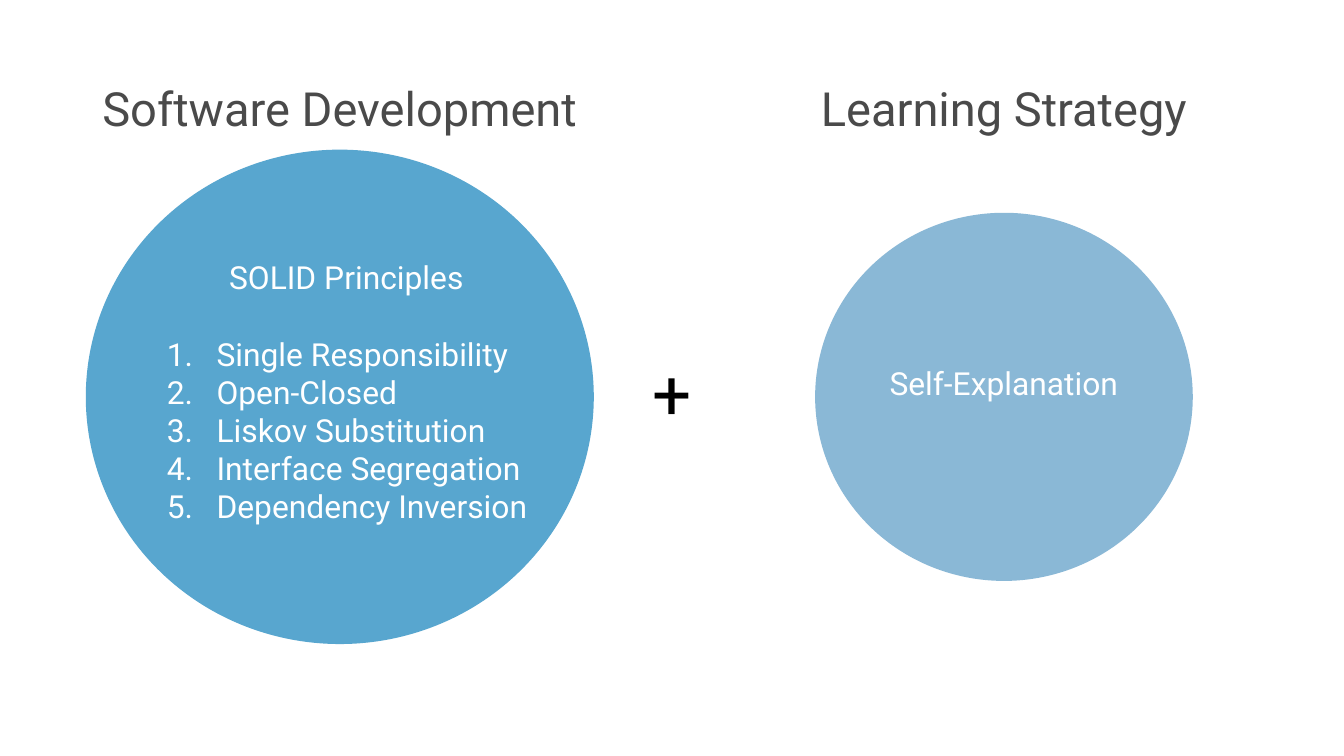
from lxml import etree
from pptx import Presentation
from pptx.dml.color import RGBColor
from pptx.enum.shapes import MSO_SHAPE
from pptx.enum.text import MSO_ANCHOR, PP_ALIGN
from pptx.oxml.ns import qn
from pptx.util import Inches, Pt

OVAL = MSO_SHAPE.OVAL
MIDDLE = MSO_ANCHOR.MIDDLE
CENTER, LEFT = PP_ALIGN.CENTER, PP_ALIGN.LEFT
WHITE, GREY, BLACK = "FFFFFF", "4A4A4A", "000000"
LEFT_X, MID_X, RIGHT_X = 25.28, 50, 74.7  # column centres, % of slide width

prs = Presentation()
prs.slide_width = Inches(10)
prs.slide_height = prs.slide_width * 9 // 16
s = prs.slides.add_slide(prs.slide_layouts[6])


def box(cx, cy, w, h):
    """Left, top, width and height from a centre and size in % of the slide."""
    x_unit, y_unit = prs.slide_width / 100, prs.slide_height / 100
    return [round(v) for v in ((cx - w / 2) * x_unit, (cy - h / 2) * y_unit,
                               w * x_unit, h * y_unit)]


def add_line(p, text, size, color, align=CENTER):
    p.alignment = align
    r = p.add_run()
    r.text = text
    r.font.name = "Roboto"
    r.font.size = Pt(size)
    r.font.color.rgb = RGBColor.from_string(color)


# Circles
for cx, w, h, color in [(LEFT_X, 37.8, 65.4, "58A6CF"),
                        (RIGHT_X, 28.1, 48.7, "8AB8D6")]:
    sp = s.shapes.add_shape(OVAL, *box(cx, 52.5, w, h))
    sp.shadow.inherit = False
    sp.fill.solid()
    sp.fill.fore_color.rgb = RGBColor.from_string(color)
    sp.line.fill.background()

# Titles, plus sign and circle labels
for text, cx, cy, w, h, size, color in [
    ("Software Development", LEFT_X, 14.2, 43.7, 11.2, 25.2, GREY),
    ("Learning Strategy", RIGHT_X, 14.2, 43.7, 11.2, 25.2, GREY),
    ("+", MID_X, 51.9, 9, 14.6, 37, BLACK),
    ("Self-Explanation", RIGHT_X, 50.6, 22.3, 8.7, 17, WHITE),
    ("SOLID Principles", 25.78, 51.8, 31.3, 39.3, 17, WHITE),
]:
    tf = s.shapes.add_textbox(*box(cx, cy, w, h)).text_frame
    tf.word_wrap = True
    tf.vertical_anchor = MIDDLE
    tf.margin_left = tf.margin_right = tf.margin_top = tf.margin_bottom = Inches(0.1)
    add_line(tf.paragraphs[0], text, size, color)

# Numbered principles continue the last box
tf.paragraphs[0].space_after = Pt(20.5)
for principle in ["Single Responsibility", "Open-Closed", "Liskov Substitution",
                  "Interface Segregation", "Dependency Inversion"]:
    p = tf.add_paragraph()
    pPr = p._p.get_or_add_pPr()
    pPr.set("marL", str(Inches(0.5)))
    pPr.set("indent", str(Inches(-0.37)))
    bullet_color = etree.SubElement(pPr, qn("a:buClr"))
    etree.SubElement(bullet_color, qn("a:srgbClr"), val=WHITE)
    etree.SubElement(pPr, qn("a:buFont"), typeface="Roboto")
    etree.SubElement(pPr, qn("a:buAutoNum"), type="arabicPeriod")
    add_line(p, principle, 17, WHITE, LEFT)

prs.save("out.pptx")
